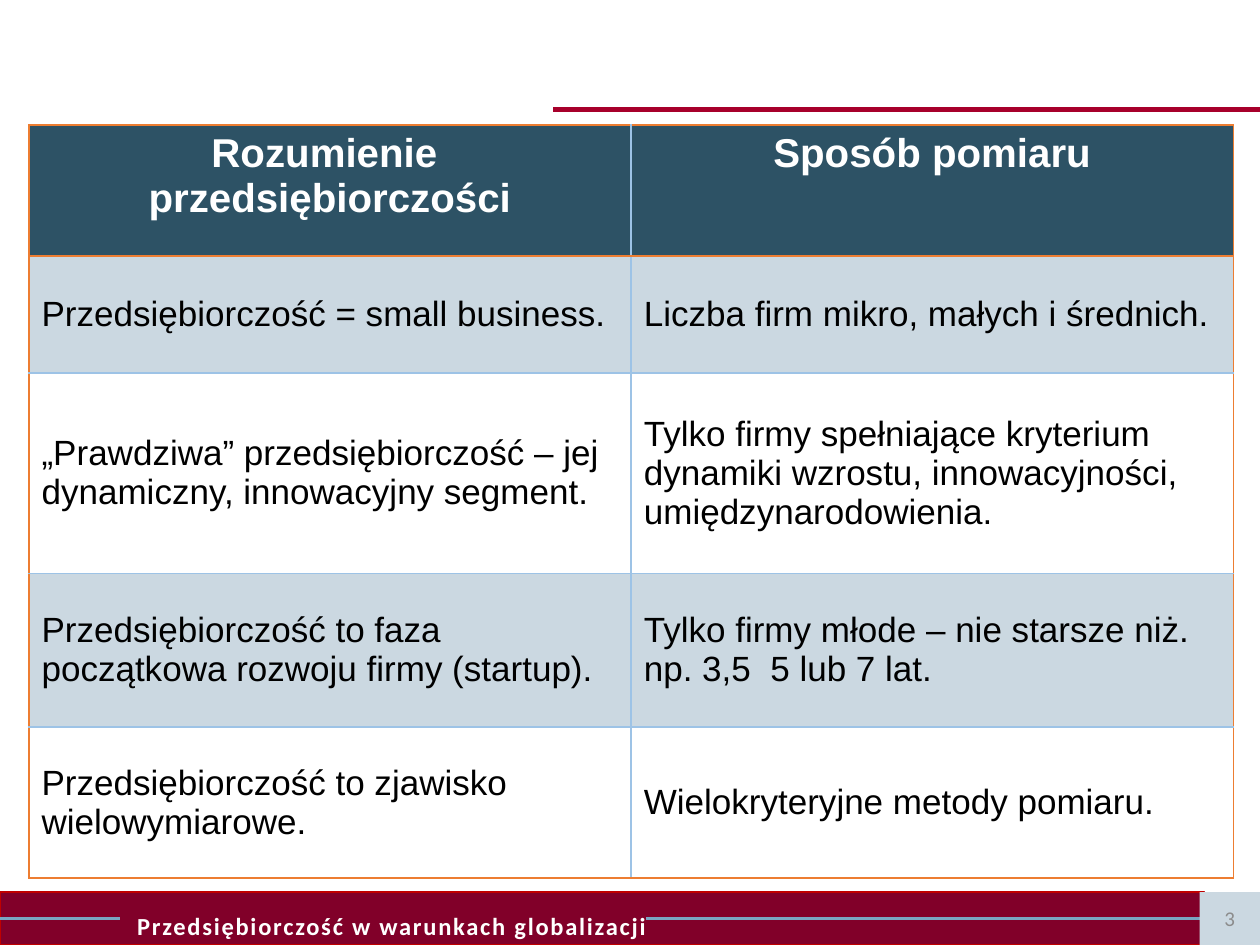
import pptx
import pptx.util
import pptx.dml.color
import pptx.enum.shapes
import pptx.enum.text
import pptx.oxml
import pptx.oxml.ns

COLORS = {
    "white": "FFFFFF", "black": "000000", "rule": "A7002B", "footer": "810029",
    "footer_edge": "C00000", "footer_rule": "7AA6C2", "pale": "CBD8E1",
    "number": "8C8C8C", "header": "2D5265", "outer": "ED7D31", "inner": "9DC3E6",
}
COLUMNS, ROWS = 100, 75
ALIGN = pptx.enum.text.PP_ALIGN
MIDDLE = pptx.enum.text.MSO_ANCHOR.MIDDLE

CONTENT = [
    ("Rozumienie  przedsiębiorczości", "Sposób pomiaru"),
    ("Przedsiębiorczość = small business.", "Liczba firm mikro, małych i średnich."),
    ("„Prawdziwa” przedsiębiorczość – jej dynamiczny, innowacyjny segment.",
     "Tylko firmy spełniające kryterium dynamiki wzrostu, innowacyjności, umiędzynarodowienia."),
    ("Przedsiębiorczość to faza początkowa rozwoju firmy (startup).",
     "Tylko firmy młode – nie starsze niż. np. 3,5  5 lub 7 lat."),
    ("Przedsiębiorczość to zjawisko wielowymiarowe.", "Wielokryteryjne metody pomiaru."),
]
ROW_HEIGHTS = [10.4, 9.3, 15.9, 12.2, 12]


def rgb(name):
    return pptx.dml.color.RGBColor.from_string(COLORS[name])


def write(frame, text, *, size, color, font="Arial", bold=False, align=ALIGN.LEFT,
          spacing=None, line_spacing=None, margin=None, indent=None):
    frame.word_wrap = True
    paragraph = frame.paragraphs[0]
    paragraph.alignment = align
    if line_spacing:
        paragraph.line_spacing = line_spacing
    if margin is not None:
        properties = paragraph._p.get_or_add_pPr()
        properties.set("marL", str(margin))
        properties.set("indent", str(indent))
    run = paragraph.add_run()
    run.text = text
    run.font.name = font
    run.font.size = pptx.util.Pt(size)
    run.font.bold = bold
    run.font.color.rgb = rgb(color)
    if spacing:
        run._r.get_or_add_rPr().set("spc", str(spacing * 100))


def set_borders(cell, **sides):
    """Draw 1 pt cell borders; sides maps L, R, T and B to colour names."""
    properties = cell._tc.get_or_add_tcPr()
    for position, side in enumerate("LRTB"):
        properties.insert(position, pptx.oxml.parse_xml(
            f'<a:ln{side} {pptx.oxml.ns.nsdecls("a")} w="12700"><a:solidFill>'
            f'<a:srgbClr val="{COLORS[sides[side]]}"/></a:solidFill></a:ln{side}>'))


class SlideBuilder:
    def __init__(self, deck):
        self.slide = deck.slides.add_slide(deck.slide_layouts[6])
        self.column = deck.slide_width / COLUMNS
        self.row = deck.slide_height / ROWS

    def x(self, columns):
        return pptx.util.Emu(round(columns * self.column))

    def y(self, rows):
        return pptx.util.Emu(round(rows * self.row))

    def box(self, left, top, width, height):
        return self.x(left), self.y(top), self.x(width), self.y(height)

    def rule(self, start, end, row, color, weight):
        line = self.slide.shapes.add_connector(
            pptx.enum.shapes.MSO_CONNECTOR.STRAIGHT,
            self.x(start), self.y(row), self.x(end), self.y(row))
        line.line.color.rgb = rgb(color)
        line.line.width = pptx.util.Pt(weight)
        line._element.spPr.append(
            pptx.oxml.parse_xml(f'<a:effectLst {pptx.oxml.ns.nsdecls("a")}/>'))

    def panel(self, area, fill, text, edge=None, **text_format):
        panel = self.slide.shapes.add_shape(
            pptx.enum.shapes.MSO_SHAPE.RECTANGLE, *self.box(*area))
        panel.shadow.inherit = False
        panel.fill.solid()
        panel.fill.fore_color.rgb = rgb(fill)
        if edge:
            panel.line.color.rgb = rgb(edge)
            panel.line.width = pptx.util.Pt(0.75)
        else:
            panel.line.fill.background()
        panel.text_frame.vertical_anchor = MIDDLE
        write(panel.text_frame, text, **text_format)

    def table(self, left, top, width, content, heights):
        last_row, last_column = len(content) - 1, len(content[0]) - 1
        table = self.slide.shapes.add_table(
            len(content), len(content[0]), *self.box(left, top, width, sum(heights))).table
        for column in table.columns:
            column.width = self.x(width / len(content[0]))
        for r, texts in enumerate(content):
            table.rows[r].height = self.y(heights[r])
            for c, text in enumerate(texts):
                cell = table.cell(r, c)
                cell.fill.solid()
                if r == 0:
                    cell.fill.fore_color.rgb = rgb("header")
                    write(cell.text_frame, text, size=23, color="white", bold=True,
                          align=ALIGN.CENTER)
                else:
                    cell.fill.fore_color.rgb = rgb("pale" if r % 2 else "white")
                    cell.vertical_anchor = MIDDLE
                    write(cell.text_frame, text, size=20, color="black")
                set_borders(
                    cell,
                    L="outer" if c == 0 else "inner",
                    R="outer" if c == last_column else "inner",
                    T="outer" if r <= 1 else "inner",
                    B="outer" if r in (0, last_row) else "inner")


def main():
    deck = pptx.Presentation()
    deck.slide_width = pptx.util.Inches(10)
    deck.slide_height = pptx.util.Inches(7.5)
    page = SlideBuilder(deck)

    page.rule(43.9, COLUMNS, 8.7, "rule", 3)
    page.panel((0, 70.8, 95.6, 4.2), "footer", "Przedsiębiorczość w warunkach globalizacji",
               edge="footer_edge", size=14, color="white", font="Calibri", bold=True,
               spacing=1, line_spacing=1.5, margin=page.x(12.8), indent=page.x(-2.9))
    for start, end in ((51.3, 95.5), (0, 9.5)):
        page.rule(start, end, 72.9, "footer_rule", 1.75)
    page.panel((95.2, 70.8, 4.8, 4.2), "pale", "3", size=12, color="number",
               font="Calibri", align=ALIGN.CENTER)
    page.table(2.3, 9.9, 95.6, CONTENT, ROW_HEIGHTS)

    deck.save("out.pptx")


if __name__ == "__main__":
    main()
